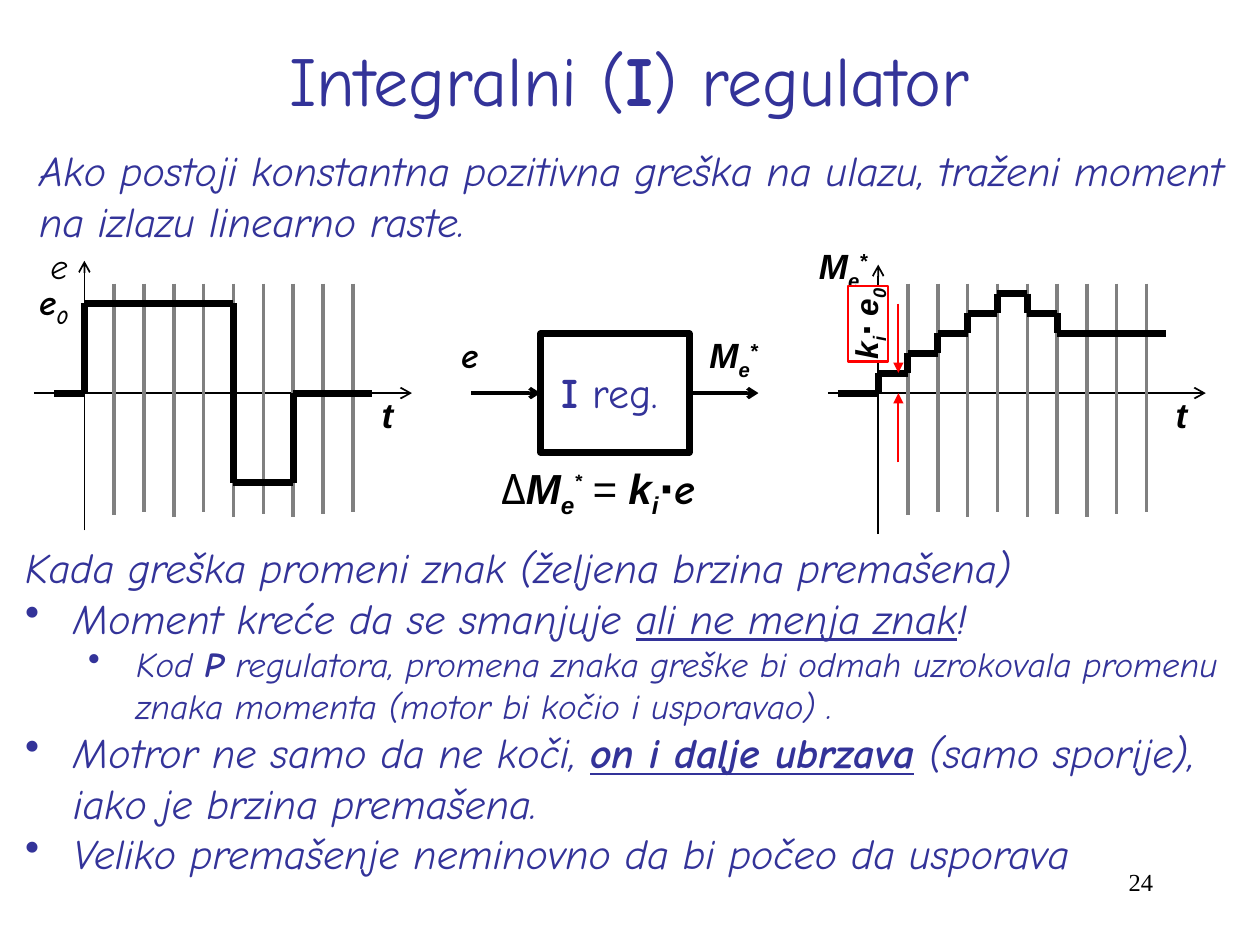
from dataclasses import dataclass, replace
from itertools import pairwise

from lxml import etree
from pptx import Presentation
from pptx import util as u
from pptx.dml.color import RGBColor
from pptx.enum import shapes, text
from pptx.oxml import ns

Inches, Pt = u.Inches, u.Pt
CENTER, RIGHT = text.PP_ALIGN.CENTER, text.PP_ALIGN.RIGHT


@dataclass(frozen=True)
class Theme:
    """Colours, fonts, type sizes and line widths of the slide."""
    blue: str = "333399"
    black: str = "000000"
    grey: str = "808080"
    red: str = "FF0000"
    white: str = "FFFFFF"
    hand: str = "Comic Neue"
    sans: str = "Arial"
    serif: str = "Times New Roman"
    title: int = 40
    body: int = 24
    label: int = 20
    small: int = 18
    number: int = 14
    thick: float = 4
    flow: float = 2
    mark: float = 1.25
    axis: float = 1
    hair: float = 0


@dataclass(frozen=True)
class Style:
    """Formatting of one run; base is the baseline shift in percent."""
    size: int
    font: str
    color: str
    bold: bool = False
    italic: bool = False
    underline: bool = False
    base: int = 0


T = Theme()
TITLE = Style(T.title, T.hand, T.blue)
BODY = Style(T.body, T.hand, T.blue, italic=True)
DETAIL = replace(BODY, size=T.label)
SYMBOL = Style(T.label, T.sans, T.black, bold=True, italic=True)
HAND = replace(SYMBOL, font=T.hand)
NUMBER = Style(T.number, T.serif, T.black)


def bold(style):
    """Return the style in bold."""
    return replace(style, bold=True)


def shifted(style, base):
    """Return the style raised or lowered by base percent."""
    return replace(style, base=base)


def moment(style):
    """Return the runs of the symbol for the demanded moment."""
    return [("M", style), ("e", shifted(style, -25)), ("*", shifted(style, 30))]


def write(p, runs):
    """Fill a paragraph with (text, style) runs."""
    for words, st in runs:
        r = p.add_run()
        r.text = words
        f = r.font
        f.size, f.name, f.color.rgb = Pt(st.size), st.font, RGBColor.from_string(st.color)
        f.bold, f.italic, f.underline = st.bold, st.italic, st.underline
        if st.base:
            r._r.get_or_add_rPr().set("baseline", str(st.base * 1000))


def set_margins(tf, side, top):
    """Set the side and the top and bottom insets of a text frame."""
    tf.margin_left = tf.margin_right = Inches(side)
    tf.margin_top = tf.margin_bottom = Inches(top)


def add_text(s, box, runs, align=None, inset=(0, 0), wrap=True):
    """Place a one-paragraph text box."""
    tf = s.shapes.add_textbox(*map(Inches, box)).text_frame
    tf.word_wrap = wrap
    set_margins(tf, *inset)
    tf.paragraphs[0].alignment = align
    write(tf.paragraphs[0], runs)
    return tf


def add_line(s, start, end, color, width, arrow=None):
    """Draw a straight line with an optional arrowhead at its end."""
    cx = s.shapes.add_connector(shapes.MSO_CONNECTOR.STRAIGHT, *map(Inches, (*start, *end)))
    cx.line.color.rgb = RGBColor.from_string(color)
    cx.line.width = Pt(width)
    sp_pr = cx._element.spPr
    if arrow:
        etree.SubElement(sp_pr.find(ns.qn("a:ln")), ns.qn("a:tailEnd"), type=arrow)
    etree.SubElement(sp_pr, ns.qn("a:effectLst"))
    return cx


def add_rect(s, box, color, width):
    """Draw an outlined white rectangle."""
    sp = s.shapes.add_shape(shapes.MSO_SHAPE.RECTANGLE, *map(Inches, box))
    sp.shadow.inherit = False
    sp.fill.solid()
    sp.fill.fore_color.rgb = RGBColor.from_string(T.white)
    sp.line.color.rgb = RGBColor.from_string(color)
    sp.line.width = Pt(width)
    return sp


def set_bullet(p, level, bullet):
    """Give a paragraph its hanging indent and bullet."""
    p.level = level
    p_pr = p._p.get_or_add_pPr()
    p_pr.set("marL", str(Inches(0.38 + 0.5 * level)))
    p_pr.set("indent", str(-Inches(0.38)))
    if bullet:
        etree.SubElement(p_pr, ns.qn("a:buChar"), char="•")


def add_title(s, box, runs):
    """Move and format the title placeholder."""
    sp = s.shapes.title
    sp.left, sp.top, sp.width, sp.height = map(Inches, box)
    sp.text_frame.vertical_anchor = text.MSO_ANCHOR.MIDDLE
    sp.text_frame.paragraphs[0].alignment = CENTER
    write(sp.text_frame.paragraphs[0], runs)


def add_plot(s, box, axis_y, lead, steps):
    """Draw axes, grid and a step signal given as (cells, level) pairs."""
    left, top, width, height = box
    x0, cell, rise = left + 0.4, 2.13 / 9, 0.79 / 5
    add_line(s, (x0, top + height), (x0, top), T.black, T.axis, "arrow")
    add_line(s, (left, axis_y), (left + width, axis_y), T.black, T.axis, "arrow")
    add_text(s, (left + 2.76, axis_y, 0.16, 0.34), [("t", SYMBOL)])
    for i, bottom in enumerate((4.09, 4.06, 4.1, 4.06, 4.1, 4.08, 4.1, 4.08, 4.06), 1):
        add_line(s, (x0 + i * cell, 2.25), (x0 + i * cell, bottom), T.grey, T.hair)
    x, level = x0, 0
    points = [(x0 - lead, axis_y), (x0, axis_y)]
    for cells, target in steps:
        if level * target < 0:
            points.append((x, axis_y))
        if target != level:
            points.append((x, axis_y - target * rise))
        x, level = x + cells * cell, target
        points.append((x, axis_y - level * rise))
    for start, end in pairwise(points):
        add_line(s, start, end, T.black, T.thick)


def add_step_mark(s, box):
    """Mark the height of one step with two arrows and a turned label."""
    left, top, width, height = box
    x = left + 0.4
    for start, end in ((2.41, 2.96), (3.67, 3.12)):
        add_line(s, (x, start), (x, end), T.red, T.mark, "triangle")
    tf = add_rect(s, box, T.red, T.mark).text_frame
    set_margins(tf, 0.01, 0)
    tf._txBody.bodyPr.set("vert", "vert270")
    tf.paragraphs[0].alignment = CENTER
    st = replace(SYMBOL, size=T.small)
    write(tf.paragraphs[0], [("k", st), ("i", shifted(st, -25)), ("⋅ e", st), ("0", shifted(st, -25))])


def add_block(s, box):
    """Draw the regulator block with its input, output and equation."""
    left, top, width, height = box
    mid, right = top + height / 2, left + width
    sp = add_rect(s, box, T.black, T.thick)
    add_line(s, (left - 0.55, mid), (left, mid), T.black, T.flow, "arrow").end_connect(sp, 1)
    add_line(s, (right, mid), (right + 0.55, mid), T.black, T.flow, "arrow").begin_connect(sp, 3)
    name = replace(BODY, italic=False)
    add_text(s, (left + 0.07, top + 0.21, 1.09, 0.5), [("I", bold(name)), (" reg.", name)],
             inset=(0.1, 0.05), wrap=False)
    add_text(s, (right + 0.16, top, 0.47, 0.34), moment(SYMBOL))
    add_text(s, (left - 0.63, top, 0.31, 0.34), [("e", HAND)])
    st = replace(SYMBOL, size=T.body)
    hand = replace(st, font=T.hand)
    delta = replace(hand, bold=False, italic=False)
    star = replace(hand, italic=False, base=30)
    add_text(s, (left - 0.31, top + 1.02, 1.85, 0.4), [
        ("Δ", delta), *moment(st)[:2], ("* ", star), ("= ", replace(st, bold=False)),
        ("k", st), ("i", shifted(st, -25)), ("⋅", st), ("e", hand)])


def add_notes(s, box, items):
    """Place the text as (level, bullet, runs) paragraphs."""
    tf = s.shapes.add_textbox(*map(Inches, box)).text_frame
    tf.word_wrap = True
    set_margins(tf, 0, 0)
    for i, (level, bullet, runs) in enumerate(items):
        p = tf.add_paragraph() if i else tf.paragraphs[0]
        set_bullet(p, level, bullet)
        write(p, runs)


def main():
    """Build the slide and save it."""
    prs = Presentation()
    prs.slide_width, prs.slide_height = Inches(10), Inches(7.5)
    s = prs.slides.add_slide(prs.slide_layouts[5])
    add_title(s, (0.15, 0, 9.69, 1.25), [("Integralni (", TITLE), ("I", bold(TITLE)), (") regulator", TITLE)])
    add_text(s, (0.31, 1.15, 9.69, 0.81), [
        ("Ako postoji konstantna pozitivna greška na ulazu, traženi moment na izlazu linearno raste.", BODY)])
    add_plot(s, (0.27, 2.07, 3, 2.14), 3.12, 0.24, [(5, 4.5), (2, -4.5), (2.66, 0)])
    add_text(s, (0.4, 1.94, 0.34, 0.34), [("e", replace(HAND, bold=False))])
    add_text(s, (0.31, 2.23, 0.31, 0.34), [("e", HAND), ("0", shifted(HAND, -25))])
    add_block(s, (4.29, 2.65, 1.18, 0.94))
    add_plot(s, (6.57, 2.1, 3, 2.14), 3.12, 0.32,
             [(1, level) for level in (1, 2, 3, 4, 5, 4, 3, 3)] + [(1.64, 3)])
    add_text(s, (6.5, 1.94, 0.47, 0.34), moment(SYMBOL))
    add_step_mark(s, (6.73, 2.27, 0.32, 0.6))
    under = replace(BODY, underline=True)
    add_notes(s, (0.2, 4.3, 9.49, 2.69), [
        (0, False, [("Kada greška promeni znak (željena brzina premašena)", BODY)]),
        (0, True, [("Moment kreće da se smanjuje ", BODY), ("ali ne menja znak", under), ("!", BODY)]),
        (1, True, [("Kod ", DETAIL), ("P", bold(DETAIL)),
                   (" regulatora, promena znaka greške bi odmah uzrokovala promenu "
                    "znaka momenta (motor bi kočio i usporavao) .", DETAIL)]),
        (0, True, [("Motror ne samo da ne koči, ", BODY), ("on i dalje ubrzava", bold(under)),
                   (" (samo sporije), iako je brzina premašena.", BODY)]),
        (0, True, [("Veliko premašenje neminovno da bi počeo da usporava", BODY)])])
    add_text(s, (7.17, 6.83, 2.08, 0.5), [("24", NUMBER)], RIGHT, (0.1, 0.05))
    prs.save("out.pptx")


if __name__ == "__main__":
    main()
